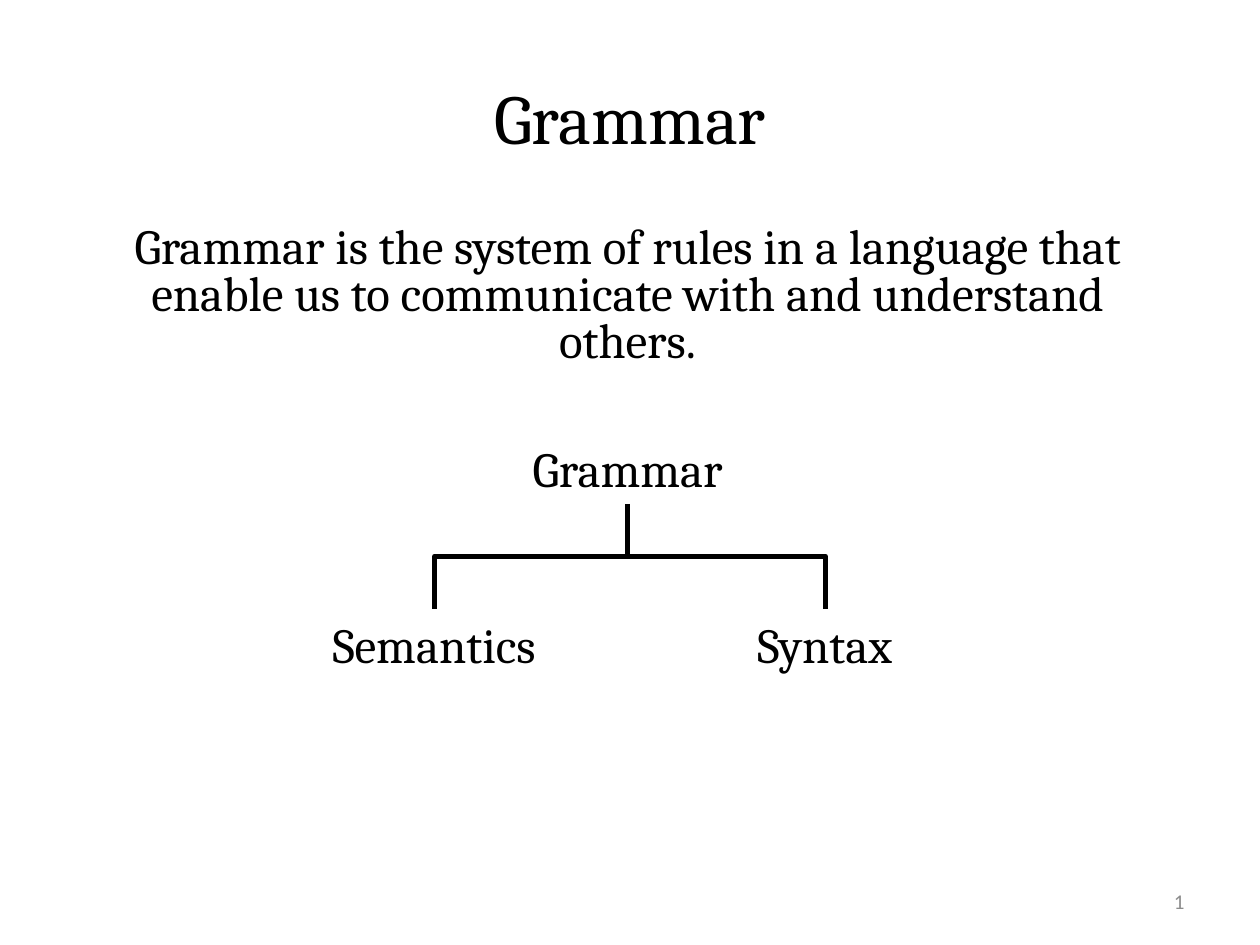
import lxml.etree
import pptx
import pptx.dml.color
import pptx.enum.shapes
import pptx.enum.text
import pptx.oxml.ns
import pptx.util

Inches = pptx.util.Inches
Align = pptx.enum.text.PP_ALIGN
Anchor = pptx.enum.text.MSO_ANCHOR
AutoSize = pptx.enum.text.MSO_AUTO_SIZE
qn = pptx.oxml.ns.qn


def color(value):
    return pptx.dml.color.RGBColor.from_string(value)


def write(sp, box, text, size, font="Cambria", fill="000000", align=Align.CENTER, **frame):
    """Place a text shape, set its frame options and give it one paragraph."""
    sp.left, sp.top, sp.width, sp.height = [Inches(v) for v in box]
    tf = sp.text_frame
    for name, value in frame.items():
        setattr(tf, name, value)
    p = tf.paragraphs[0]
    p.alignment = align
    r = p.add_run()
    r.text = text
    for name, value in {"name": font, "size": pptx.util.Pt(size)}.items():
        setattr(r.font, name, value)
    r.font.color.rgb = color(fill)
    return p


prs = pptx.Presentation()
prs.slide_width, prs.slide_height = Inches(10), Inches(7.5)
s = prs.slides.add_slide(prs.slide_layouts[1])

# Slide number
write(s.shapes.add_textbox(0, 0, 0, 0), (7.17, 6.95, 2.33, 0.4), "1", 12, "Calibri",
      "8C8C8C", Align.RIGHT, word_wrap=True, vertical_anchor=Anchor.MIDDLE)

# Title and definition
write(s.shapes.title, (0.75, 0.3, 8.5, 1.25), "Grammar", 40,
      auto_size=AutoSize.NONE, vertical_anchor=Anchor.MIDDLE)
p = write(s.placeholders[1], (0.73, 1.75, 8.5, 1.25),
          "Grammar is the system of rules in a language that enable us to "
          "communicate with and understand others.", 28,
          auto_size=AutoSize.NONE, vertical_anchor=Anchor.TOP)
p.line_spacing = 0.8
pPr = p._p.get_or_add_pPr()
for name in ("marL", "indent"):
    pPr.set(name, "0")
lxml.etree.SubElement(pPr, qn("a:buNone"))

# Tree labels
for text, left, top, width in [
    ("Grammar", 4.04, 3.43, 1.88),
    ("Syntax", 5.86, 4.83, 1.37),
    ("Semantics", 2.48, 4.83, 1.93),
]:
    write(s.shapes.add_textbox(0, 0, 0, 0), (left, top, width, 0.57), text, 28,
          word_wrap=False, auto_size=AutoSize.SHAPE_TO_FIT_TEXT)

# Tree branches: elbows turned by 270 degrees, so that they leave vertically
root, semantics, syntax = (4.98, 4), (3.45, 4.83), (6.55, 4.83)
for (x1, y1), (x2, y2) in [(semantics, root), (root, syntax)]:
    cx, cy = (x1 + x2) / 2, (y1 + y2) / 2
    dx, dy = (x2 - x1) / 2, (y2 - y1) / 2
    branch = s.shapes.add_connector(
        pptx.enum.shapes.MSO_CONNECTOR.ELBOW,
        Inches(cx + dy), Inches(cy - dx), Inches(cx - dy), Inches(cy + dx))
    branch.line.color.rgb = color("000000")
    branch.line.width = pptx.util.Pt(3)
    spPr = branch.element.spPr
    spPr.find(qn("a:xfrm")).set("rot", str(270 * 60000))
    lxml.etree.SubElement(spPr, qn("a:effectLst"))

prs.save("out.pptx")
